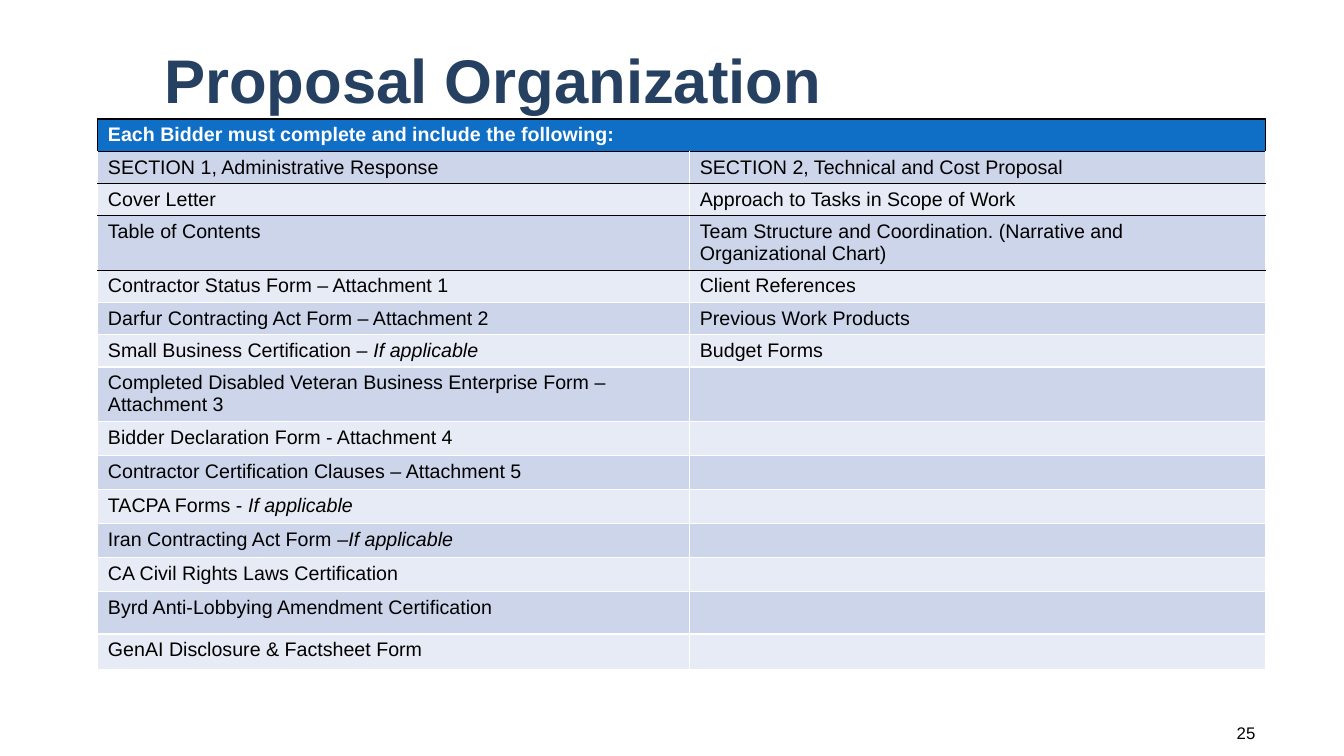
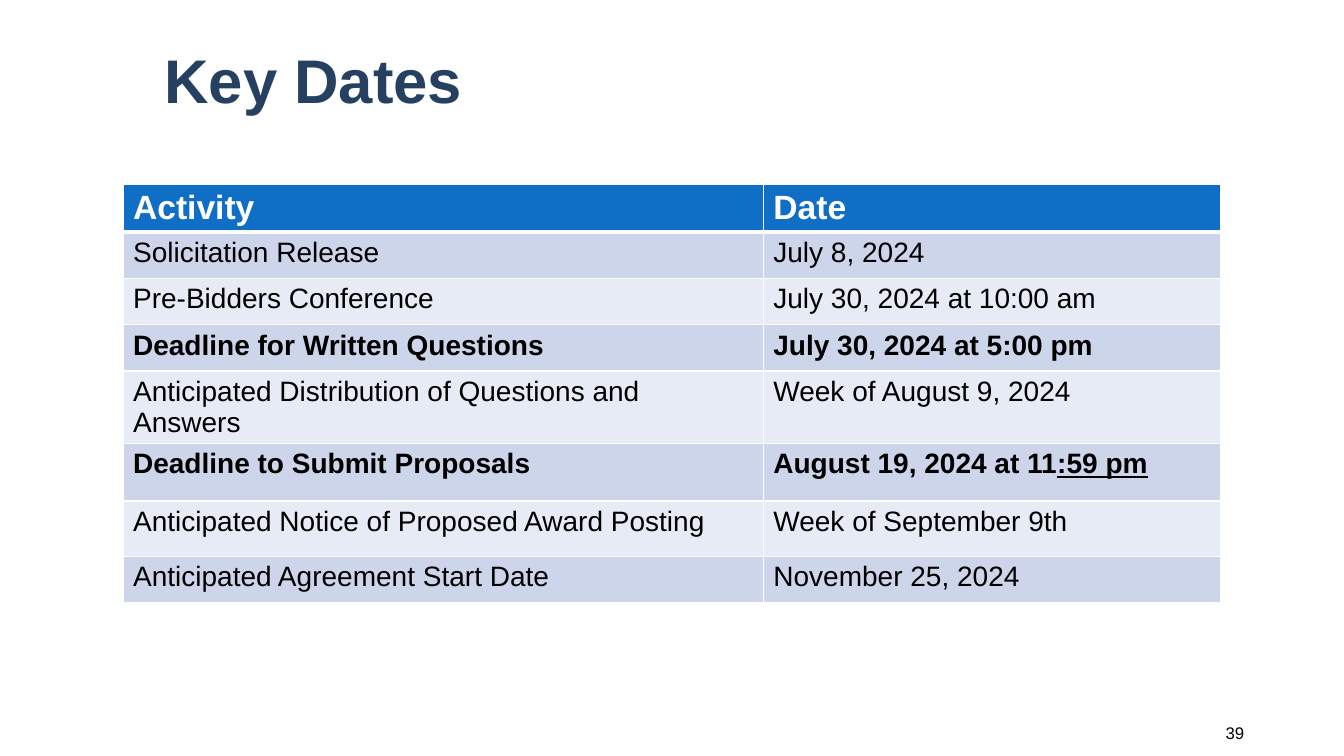
from dataclasses import dataclass

from pptx import Presentation
from pptx.dml.color import RGBColor
from pptx.enum.text import MSO_ANCHOR, MSO_AUTO_SIZE, PP_ALIGN
from pptx.oxml.ns import qn
from pptx.util import Inches, Pt
from lxml import etree

LEFT, RIGHT = PP_ALIGN.LEFT, PP_ALIGN.RIGHT
MIDDLE = MSO_ANCHOR.MIDDLE
NO_FIT = MSO_AUTO_SIZE.NONE


@dataclass(frozen=True)
class Theme:
    font: str = "Arial"
    title: str = "254061"
    text: str = "000000"
    header: str = "0F6FC6"
    header_text: str = "FFFFFF"
    bands: tuple = ("CCD5EA", "E7EBF5")
    light_line: str = "FFFFFF"
    dark_line: str = "000000"
    title_size: int = 44
    number_size: int = 12
    line_width: int = 1


THEME = Theme()

TABLES = [
    {
        "title": "Proposal Organization",
        "number": "25",
        "number_left": 79.37,
        "origin": (7.28, 15.73),
        "columns": (44.04, 42.84),
        "row_height": 4.27,
        "tall_rows": {3: 7.2, 7: 7.2, 11: 4.53, 12: 4.53, 13: 5.6, 14: 4.67},
        "header_size": 14,
        "body_size": 14,
        "emphasis": "italic",
        "bold_rows": (),
        "dark_rules": range(5),
        "dark_header_sides": True,
        "header_rule": 1,
        "rows": [
            ("Each Bidder must complete and include the following:",),
            ("SECTION 1, Administrative Response", "SECTION 2, Technical and Cost Proposal"),
            ("Cover Letter", "Approach to Tasks in Scope of Work"),
            ("Table of Contents",
             "Team Structure and Coordination. (Narrative and Organizational Chart)"),
            ("Contractor Status Form – Attachment 1", "Client References"),
            ("Darfur Contracting Act Form – Attachment 2", "Previous Work Products"),
            ("Small Business Certification – |If applicable", "Budget Forms"),
            ("Completed Disabled Veteran Business Enterprise Form – Attachment 3", ""),
            ("Bidder Declaration Form - Attachment 4", ""),
            ("Contractor Certification Clauses – Attachment 5", ""),
            ("TACPA Forms - |If applicable", ""),
            ("Iran Contracting Act Form |–If applicable", ""),
            ("CA Civil Rights Laws Certification", ""),
            ("Byrd Anti-Lobbying Amendment Certification", ""),
            ("GenAI Disclosure & Factsheet Form", ""),
        ],
    },
    {
        "title": "Key Dates",
        "number": "39",
        "number_left": 78.54,
        "origin": (9.15, 24.4),
        "columns": (47.64, 34.06),
        "row_height": 6.13,
        "tall_rows": {4: 9.6, 5: 7.6, 6: 7.33},
        "header_size": 24,
        "body_size": 20,
        "emphasis": "underline",
        "bold_rows": (3, 5),
        "dark_rules": (),
        "dark_header_sides": False,
        "header_rule": 3,
        "rows": [
            ("Activity", "Date"),
            ("Solicitation Release", "July 8, 2024"),
            ("Pre-Bidders Conference", "July 30, 2024 at 10:00 am"),
            ("Deadline for Written Questions", "July 30, 2024 at 5:00 pm"),
            ("Anticipated Distribution of Questions and Answers", "Week of August 9, 2024"),
            ("Deadline to Submit Proposals", "August 19, 2024 at 11|:59 pm"),
            ("Anticipated Notice of Proposed Award Posting", "Week of September 9th"),
            ("Anticipated Agreement Start Date", "November 25, 2024"),
        ],
    },
]


def style_font(font, size, color, bold=False):
    font.name = THEME.font
    font.size = Pt(size)
    font.bold = bold
    font.color.rgb = RGBColor.from_string(color)


def add_border(cell, side, color, width):
    line = etree.SubElement(cell._tc.get_or_add_tcPr(), qn(f"a:ln{side}"), w=str(Pt(width)))
    fill = etree.SubElement(line, qn("a:solidFill"))
    etree.SubElement(fill, qn("a:srgbClr"), val=color)


deck = Presentation()
deck.slide_width = Inches(13.33)
deck.slide_height = Inches(7.5)
column = deck.slide_width / 100
row = deck.slide_height / 100

for content in TABLES:
    page = deck.slides.add_slide(deck.slide_layouts[5])

    title = page.shapes.title
    title.left, title.top = int(11.48 * column), int(3.47 * row)
    title.width, title.height = int(81.7 * column), int(15.2 * row)
    title.text_frame.text = content["title"]
    title.text_frame.auto_size = NO_FIT
    title.text_frame.vertical_anchor = MIDDLE
    para = title.text_frame.paragraphs[0]
    para.alignment = LEFT
    para.line_spacing = 0.9
    style_font(para.runs[0].font, THEME.title_size, THEME.title, bold=True)

    rows = content["rows"]
    heights = [content["tall_rows"].get(i, content["row_height"]) for i in range(len(rows))]
    left, top = content["origin"]
    table = page.shapes.add_table(
        len(rows), len(content["columns"]), int(left * column), int(top * row),
        int(sum(content["columns"]) * column), int(sum(heights) * row)).table
    for table_column, width in zip(table.columns, content["columns"]):
        table_column.width = int(width * column)
    for table_row, height in zip(table.rows, heights):
        table_row.height = int(height * row)
    if len(rows[0]) == 1:
        table.cell(0, 0).merge(table.cell(0, 1))

    for row_index, texts in enumerate(rows):
        is_header = row_index == 0
        size = content["header_size"] if is_header else content["body_size"]
        color = THEME.header_text if is_header else THEME.text
        bold = is_header or row_index in content["bold_rows"]
        background = THEME.header if is_header else THEME.bands[(row_index - 1) % 2]
        dark_sides = is_header and content["dark_header_sides"]
        side_color = THEME.dark_line if dark_sides else THEME.light_line

        for column_index in range(len(content["columns"])):
            cell = table.cell(row_index, column_index)
            for side in "LR":
                add_border(cell, side, side_color, THEME.line_width)
            for side, rule in (("T", row_index), ("B", row_index + 1)):
                dark = rule in content["dark_rules"]
                add_border(cell, side, THEME.dark_line if dark else THEME.light_line,
                           content["header_rule"] if rule == 1 else THEME.line_width)
            cell.fill.solid()
            cell.fill.fore_color.rgb = RGBColor.from_string(background)

            text = texts[column_index] if column_index < len(texts) else ""
            para = cell.text_frame.paragraphs[0]
            for part_index, part in enumerate(text.split("|") if text else ()):
                span = para.add_run()
                span.text = part
                style_font(span.font, size, color, bold)
                if part_index == 1:
                    setattr(span.font, content["emphasis"], True)
            if not text:
                para._p.get_or_add_endParaRPr().set("sz", str(size * 100))

    number = page.shapes.add_textbox(
        int(content["number_left"] * column), int(94.27 * row),
        int(14.78 * column), int(5.33 * row))
    number.text_frame.word_wrap = True
    number.text_frame.vertical_anchor = MIDDLE
    number.text_frame.text = content["number"]
    para = number.text_frame.paragraphs[0]
    para.alignment = RIGHT
    style_font(para.runs[0].font, THEME.number_size, THEME.text)

deck.save("out.pptx")
